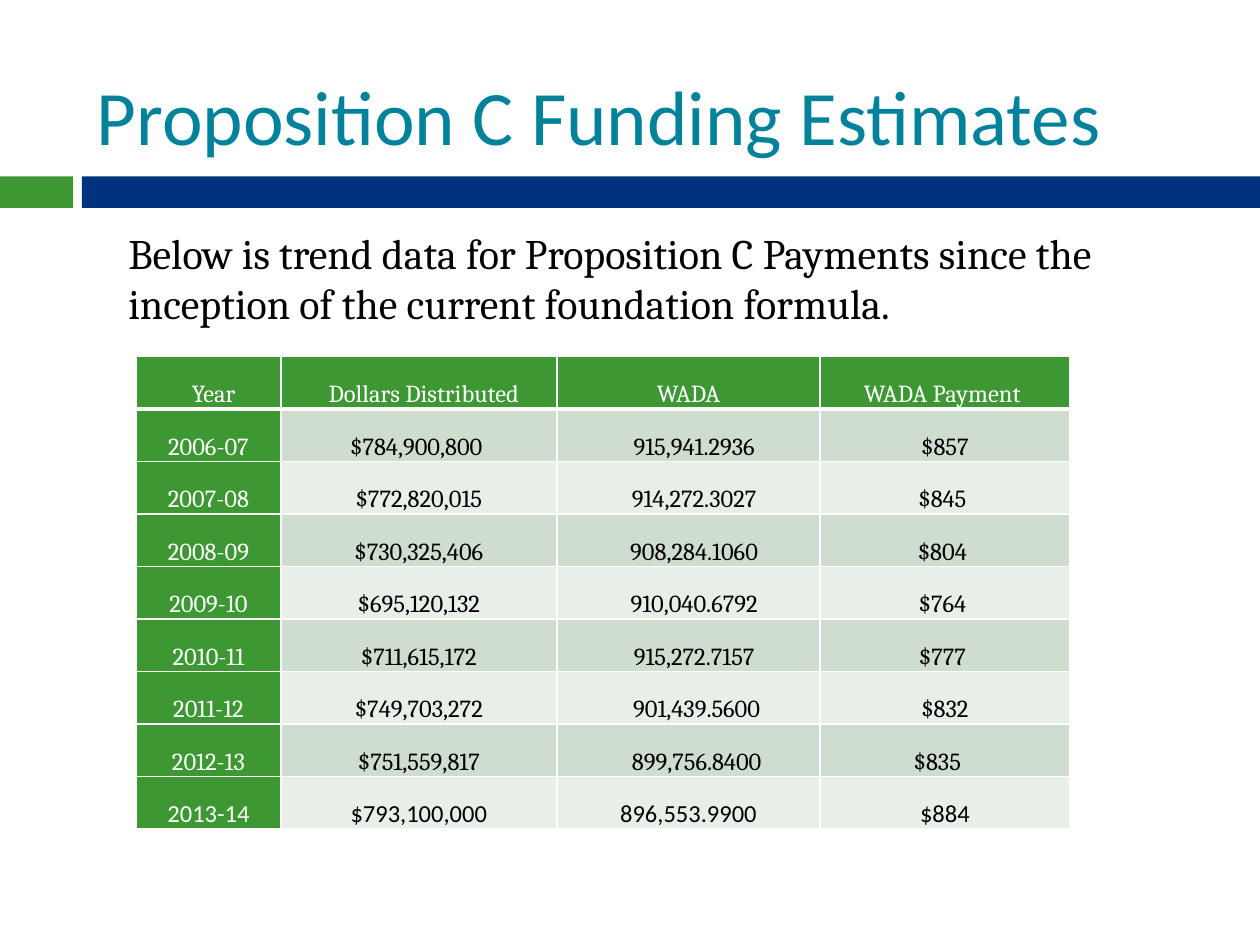
"""Build the Proposition C funding estimates slide."""
from lxml.etree import SubElement
from pptx import Presentation
from pptx.dml.color import RGBColor
from pptx.enum.shapes import MSO_SHAPE
from pptx.enum.text import MSO_ANCHOR, PP_ALIGN
from pptx.oxml.ns import qn
from pptx.util import Inches, Pt

COLORS = {
    "green": "3D9833",
    "navy": "00337F",
    "teal": "00829B",
    "dark_band": "CEDDCE",
    "light_band": "E8EFE8",
    "white": "FFFFFF",
    "black": "000000",
}


def write_text(frame, text, size=14, font="Cambria", color="black",
               align=PP_ALIGN.LEFT, anchor=MSO_ANCHOR.MIDDLE):
    frame.word_wrap = True
    frame.vertical_anchor = anchor
    para = frame.paragraphs[0]
    para.alignment = align
    span = para.add_run()
    span.text = text
    span.font.size = Pt(size)
    span.font.name = font
    span.font.color.rgb = RGBColor.from_string(COLORS[color])


def add_border(cell, side, width):
    line = SubElement(cell._tc.get_or_add_tcPr(), qn(f"a:{side}"), w=str(Pt(width)))
    fill = SubElement(line, qn("a:solidFill"))
    SubElement(fill, qn("a:srgbClr"), val=COLORS["white"])


deck = Presentation()
deck.slide_width = Inches(10)
deck.slide_height = Inches(7.5)
page = deck.slides.add_slide(deck.slide_layouts[6])

for left, width, color in [(0, 0.58, "green"), (0.65, 9.35, "navy")]:
    bar = page.shapes.add_shape(
        MSO_SHAPE.RECTANGLE, Inches(left), Inches(1.4), Inches(width), Inches(0.25))
    bar.shadow.inherit = False
    bar.fill.solid()
    bar.fill.fore_color.rgb = RGBColor.from_string(COLORS[color])
    bar.line.fill.background()

title = page.shapes.add_textbox(Inches(0.67), Inches(0.25), Inches(8.92), Inches(1.08))
write_text(title.text_frame, "Proposition C Funding Estimates", size=44,
           font="Calibri", color="teal", anchor=MSO_ANCHOR.BOTTOM)

rows = [
    ("Year", "Dollars Distributed", "WADA", "WADA Payment"),
    ("2006-07", "$784,900,800", "915,941.2936", "$857"),
    ("2007-08", "$772,820,015", "914,272.3027", "$845"),
    ("2008-09", "$730,325,406", "908,284.1060", "$804"),
    ("2009-10", "$695,120,132", "910,040.6792", "$764"),
    ("2010-11", "$711,615,172", "915,272.7157", "$777"),
    ("2011-12", "$749,703,272", "901,439.5600", "$832"),
    ("2012-13", "$751,559,817", "899,756.8400", "$835"),
    ("2013-14", "$793,100,000", "896,553.9900", "$884"),
]
column_widths = [1.15, 2.19, 2.09, 1.98]
left_indents = {(0, 0): 0.08, (0, 1): 0.08, (6, 2): 0.13, (7, 2): 0.13}
left_indents.update({(row, 2): 0.09 for row in range(1, 6)})
right_indents = {(0, 3): 0.04, (1, 1): 0.04, (7, 3): 0.12}
right_indents.update({(row, 3): 0.04 for row in range(2, 6)})

table = page.shapes.add_table(
    len(rows), len(column_widths), Inches(1.08), Inches(2.83),
    Inches(7.42), Inches(3.75)).table
table.first_col = True
for column, width in zip(table.columns, column_widths):
    column.width = Inches(width)

for row_index, values in enumerate(rows):
    is_header = row_index == 0
    is_last = row_index == len(rows) - 1
    band = "dark_band" if row_index % 2 else "light_band"
    for column_index, value in enumerate(values):
        place = (row_index, column_index)
        is_green = is_header or column_index == 0
        cell = table.cell(*place)
        cell.margin_left = Inches(0.07 + left_indents.get(place, 0))
        cell.margin_right = Inches(0.07 + right_indents.get(place, 0))
        cell.margin_top = cell.margin_bottom = 0
        cell.vertical_anchor = MSO_ANCHOR.BOTTOM
        write_text(cell.text_frame, value,
                   font="Calibri" if is_last else "Cambria",
                   color="white" if is_green else "black",
                   align=PP_ALIGN.CENTER, anchor=None)
        for side in ("lnL", "lnR", "lnT", "lnB"):
            add_border(cell, side, 3 if is_header and side == "lnB" else 1)
        cell.fill.solid()
        cell.fill.fore_color.rgb = RGBColor.from_string(
            COLORS["green" if is_green else band])

intro = page.shapes.add_textbox(Inches(0.92), Inches(1.75), Inches(8.17), Inches(0.91))
write_text(intro.text_frame,
           "Below is trend data for Proposition C Payments since the "
           "inception of the current foundation formula.", size=24)

deck.save("out.pptx")
